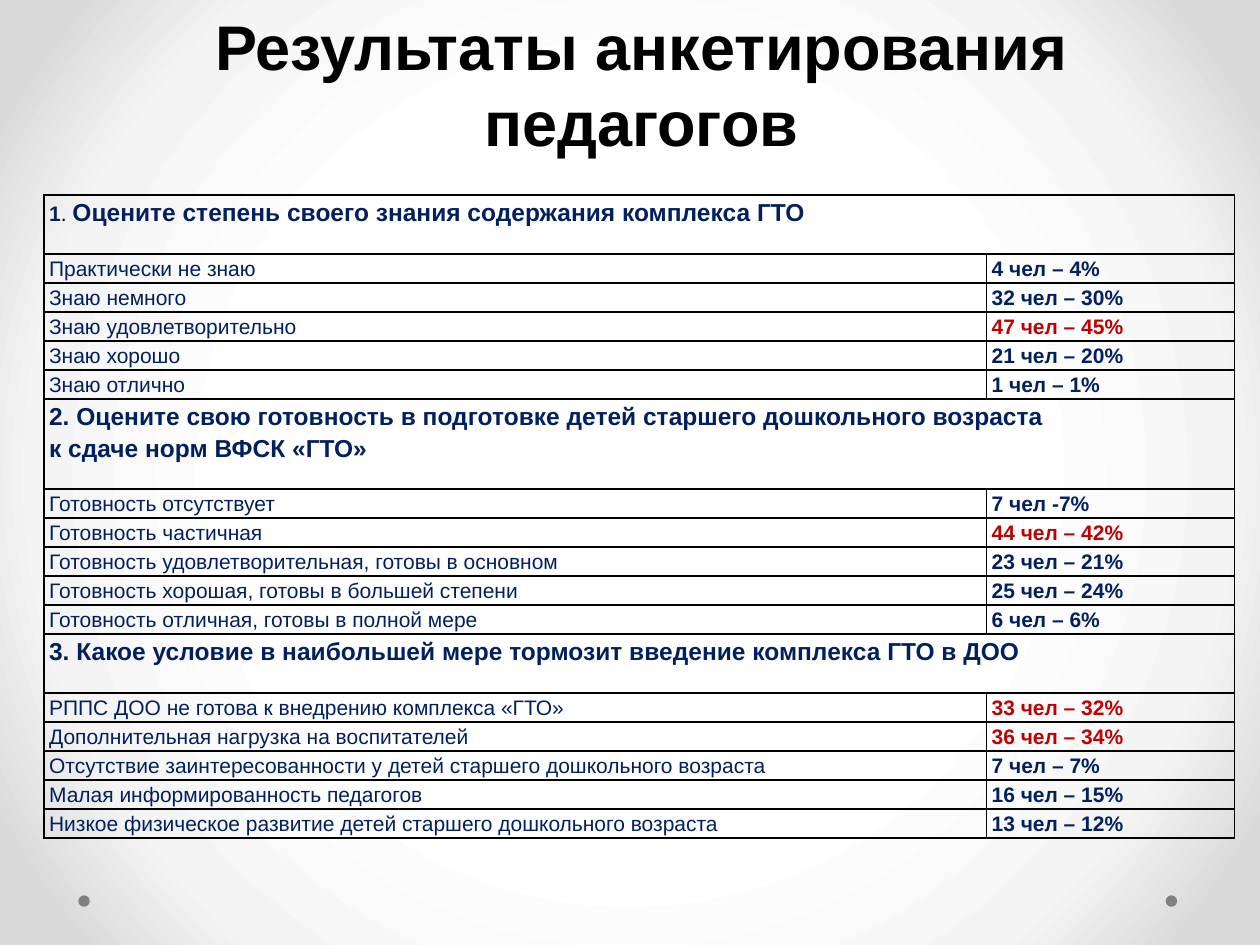
from pptx import Presentation
from pptx import util as u
from pptx.dml import color
from pptx.enum import shapes, text
from pptx.oxml import parse_xml
from pptx.oxml.ns import nsdecls

NAVY, RED, BLACK, GREY = "002060", "C00000", "000000", "808080"


def rgb(value):
    return color.RGBColor.from_string(value)


def add_run(paragraph, words, size, colour, bold):
    run = paragraph.add_run()
    run.text = words
    font_format = {"name": "Arial", "size": u.Pt(size), "bold": bold}
    for name, value in font_format.items():
        setattr(run.font, name, value)
    run.font.color.rgb = rgb(colour)


presentation = Presentation()
presentation.slide_width, presentation.slide_height = u.Cm(25.4), u.Cm(19.05)
slide = presentation.slides.add_slide(presentation.slide_layouts[6])

# Background: light in the centre, grey towards the corners
stops = "".join(
    f'<a:gs pos="{percent * 1000}"><a:srgbClr val="{shade}"/></a:gs>'
    for percent, shade in [(50, "FFFFFF"), (76, "F4F4F4"), (92, "DADADA")]
)
background = parse_xml(
    f'<p:bg {nsdecls("p", "a")}><p:bgPr><a:gradFill rotWithShape="1">'
    f'<a:gsLst>{stops}</a:gsLst><a:path path="circle">'
    '<a:fillToRect l="50000" t="50000" r="50000" b="50000"/></a:path>'
    "</a:gradFill><a:effectLst/></p:bgPr></p:bg>"
)
slide.element.cSld.insert(0, background)

for left in (1.58, 23.5):
    dot = slide.shapes.add_shape(
        shapes.MSO_SHAPE.OVAL, u.Cm(left), u.Cm(18.05), u.Cm(0.23), u.Cm(0.23)
    )
    dot.shadow.inherit = False
    dot.fill.solid()
    dot.fill.fore_color.rgb = rgb(GREY)
    dot.line.fill.background()

title = slide.shapes.add_textbox(u.Cm(1.5), u.Cm(0), u.Cm(22.86), u.Cm(3.33))
title_format = {"word_wrap": True, "vertical_anchor": text.MSO_ANCHOR.BOTTOM}
for name, value in title_format.items():
    setattr(title.text_frame, name, value)
title_paragraph = title.text_frame.paragraphs[0]
title_paragraph.alignment = text.PP_ALIGN.CENTER
add_run(title_paragraph, "Результаты анкетирования педагогов", 36, BLACK, True)

# Each question: heading lines, heading height, answers, most frequent answers
questions = [
    (
        ["Оцените степень своего знания содержания комплекса ГТО"],
        1.19,
        [
            ("Практически не знаю", "4 чел – 4%"),
            ("Знаю немного", "32 чел – 30%"),
            ("Знаю удовлетворительно", "47 чел – 45%"),
            ("Знаю хорошо", "21 чел – 20%"),
            ("Знаю отлично", "1 чел – 1%"),
        ],
        {2},
    ),
    (
        [
            "2. Оцените свою готовность в подготовке детей старшего дошкольного возраста",
            "к сдаче норм ВФСК «ГТО»",
        ],
        1.81,
        [
            ("Готовность отсутствует", "7 чел -7%"),
            ("Готовность частичная", "44 чел – 42%"),
            ("Готовность удовлетворительная, готовы в основном", "23 чел – 21%"),
            ("Готовность хорошая, готовы в большей степени", "25 чел – 24%"),
            ("Готовность отличная, готовы в полной мере", "6 чел – 6%"),
        ],
        {1},
    ),
    (
        ["3. Какое условие в наибольшей мере тормозит введение комплекса ГТО в ДОО"],
        1.19,
        [
            ("РППС ДОО не готова к внедрению комплекса «ГТО»", "33 чел – 32%"),
            ("Дополнительная нагрузка на воспитателей", "36 чел – 34%"),
            (
                "Отсутствие заинтересованности у детей старшего дошкольного возраста",
                "7 чел – 7%",
            ),
            ("Малая информированность педагогов", "16 чел – 15%"),
            (
                "Низкое физическое развитие детей старшего дошкольного возраста",
                "13 чел – 12%",
            ),
        ],
        {0, 1},
    ),
]

row_count = sum(1 + len(answers) for _, _, answers, _ in questions)
table = slide.shapes.add_table(
    row_count, 2, u.Cm(0.89), u.Cm(3.93), u.Cm(24), u.Cm(12.4)
).table
table.first_row = table.horz_banding = False
for column, width in zip(table.columns, (19, 5)):
    column.width = u.Cm(width)

cell_format = {
    "margin_left": u.Cm(0.1),
    "margin_right": u.Cm(0.1),
    "margin_top": 0,
    "margin_bottom": 0,
}
for cell in table.iter_cells():
    for name, value in cell_format.items():
        setattr(cell, name, value)
    cell.fill.background()
    cell.text_frame.paragraphs[0].line_spacing = 1.15
    properties = cell._tc.get_or_add_tcPr()
    for index, side in enumerate("LRTB"):
        border = parse_xml(
            f'<a:ln{side} {nsdecls("a")} w="12700"><a:solidFill>'
            f'<a:srgbClr val="{BLACK}"/></a:solidFill></a:ln{side}>'
        )
        properties.insert(index, border)

row = 0
for number, (heading, height, answers, leaders) in enumerate(questions, 1):
    table.rows[row].height = u.Cm(height)
    heading_cell = table.cell(row, 0)
    heading_cell.merge(table.cell(row, 1))
    for index, line in enumerate(heading):
        frame = heading_cell.text_frame
        paragraph = frame.add_paragraph() if index else frame.paragraphs[0]
        paragraph.line_spacing = 1.15
        if number == 1:
            add_run(paragraph, "1", 12, NAVY, True)
            add_run(paragraph, ". ", 12, BLACK, False)
        add_run(paragraph, line, 14, NAVY, True)
    row += 1
    for index, (answer, result) in enumerate(answers):
        table.rows[row].height = u.Cm(0.54)
        answer_paragraph, result_paragraph = (
            table.cell(row, column).text_frame.paragraphs[0] for column in (0, 1)
        )
        add_run(answer_paragraph, answer, 12, NAVY, False)
        add_run(result_paragraph, result, 12, RED if index in leaders else NAVY, True)
        row += 1

presentation.save("out.pptx")
